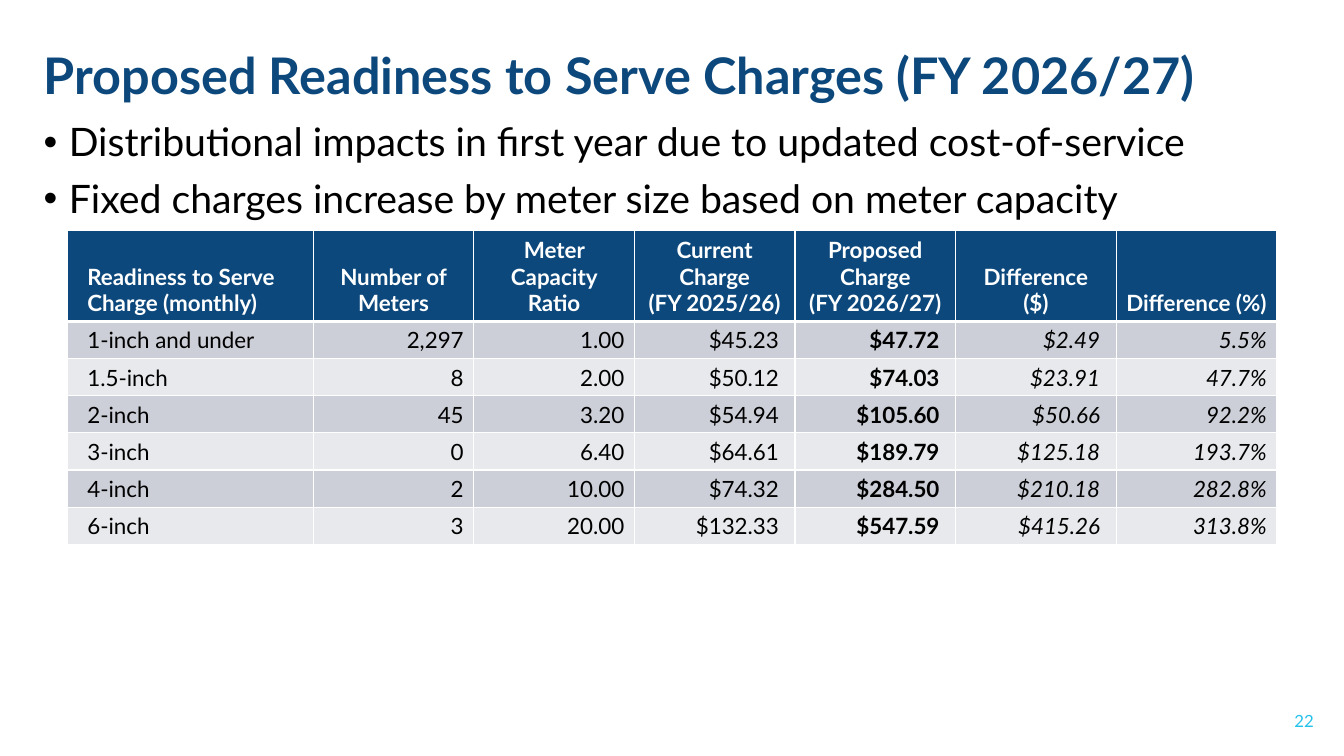
from lxml.etree import SubElement
from pptx import Presentation
from pptx.dml.color import RGBColor
from pptx.enum.text import MSO_ANCHOR as Anchor, MSO_AUTO_SIZE as AutoSize, PP_ALIGN as Align
from pptx.oxml.ns import qn
from pptx.util import Inches, Pt

NAVY = RGBColor(0x0C, 0x48, 0x7C)
CYAN = RGBColor(0x24, 0xC2, 0xEB)
BLACK = RGBColor(0x00, 0x00, 0x00)
WHITE = RGBColor(0xFF, 0xFF, 0xFF)
BANDS = RGBColor(0xCC, 0xCF, 0xD7), RGBColor(0xE7, 0xE9, 0xEC)

GRID_COLUMNS, GRID_ROWS = 40, 75
LABEL_WIDTH, VALUE_WIDTH = 7.32, 4.78
HEADER_HEIGHT, TABLE_HEIGHT = 8.9, 31
PROPOSED_COLUMN = 4

HEADERS = [
    "Readiness to Serve Charge (monthly)", "Number of Meters", "Meter Capacity Ratio",
    "Current\nCharge\n(FY 2025/26)", "Proposed\nCharge\n(FY 2026/27)",
    "Difference\n($)", "Difference (%)",
]
CHARGES = [
    ["1-inch and under", "2,297", "1.00", "$45.23", "$47.72", "$2.49", "5.5%"],
    ["1.5-inch", "8", "2.00", "$50.12", "$74.03", "$23.91", "47.7%"],
    ["2-inch", "45", "3.20", "$54.94", "$105.60", "$50.66", "92.2%"],
    ["3-inch", "0", "6.40", "$64.61", "$189.79", "$125.18", "193.7%"],
    ["4-inch", "2", "10.00", "$74.32", "$284.50", "$210.18", "282.8%"],
    ["6-inch", "3", "20.00", "$132.33", "$547.59", "$415.26", "313.8%"],
]


def write(frame, text, size=16, color=BLACK, bold=False, italic=False, align=Align.LEFT,
          anchor=Anchor.BOTTOM, spacing=None, gap=0, indent=0, bullet=None):
    """Fill a text frame, one paragraph per line; a bullet hangs in the indent."""
    frame.word_wrap = True
    frame.vertical_anchor = anchor
    for index, line in enumerate(text.split("\n")):
        paragraph = frame.add_paragraph() if index else frame.paragraphs[0]
        paragraph.text = line
        properties = paragraph._p.get_or_add_pPr()
        properties.set("marL", str(Inches(indent)))
        properties.set("indent", str(-Inches(indent) if bullet else 0))
        if bullet:
            SubElement(properties, qn("a:buChar"), char=bullet)
        paragraph.alignment = align
        paragraph.line_spacing = spacing
        paragraph.space_before = Pt(gap if index else 0)
        font = paragraph.font
        font.name, font.size, font.bold, font.italic = "Lato", Pt(size), bold, italic
        font.color.rgb = color


def set_borders(cell, top, bottom):
    """Draw white cell borders; the sides are one point wide."""
    properties = cell._tc.get_or_add_tcPr()
    for side, width in zip("LRTB", (1, 1, top, bottom)):
        line = SubElement(properties, qn(f"a:ln{side}"), w=str(Pt(width)))
        fill = SubElement(line, qn("a:solidFill"))
        SubElement(fill, qn("a:srgbClr"), val=str(WHITE))


class ChargesSlide:
    def __init__(self, presentation):
        self.column = presentation.slide_width / GRID_COLUMNS
        self.row = presentation.slide_height / GRID_ROWS
        self.slide = presentation.slides.add_slide(presentation.slide_layouts[1])

    def box(self, left, top, width, height):
        return (round(left * self.column), round(top * self.row),
                round(width * self.column), round(height * self.row))

    def fill_placeholder(self, number, box, text, **style):
        shape = self.slide.placeholders[number]
        shape.left, shape.top, shape.width, shape.height = self.box(*box)
        shape.text_frame.auto_size = AutoSize.NONE
        write(shape.text_frame, text, spacing=0.9, **style)

    def add_text(self, box, text, **style):
        shape = self.slide.shapes.add_textbox(*self.box(*box))
        write(shape.text_frame, text, **style)

    def add_table(self, left, top, headers, body):
        widths = [LABEL_WIDTH] + [VALUE_WIDTH] * (len(headers) - 1)
        heights = [HEADER_HEIGHT] + [(TABLE_HEIGHT - HEADER_HEIGHT) / len(body)] * len(body)
        box = self.box(left, top, sum(widths), TABLE_HEIGHT)
        table = self.slide.shapes.add_table(len(heights), len(widths), *box).table
        for column, width in zip(table.columns, widths):
            column.width = round(width * self.column)
        for row, height in zip(table.rows, heights):
            row.height = round(height * self.row)
        for row, texts in enumerate([headers] + body):
            for column, text in enumerate(texts):
                self.fill_cell(table.cell(row, column), row, column, text)

    def fill_cell(self, cell, row, column, text):
        header = row == 0
        set_borders(cell, top=3 if row == 1 else 1, bottom=3 if header else 1)
        cell.fill.solid()
        cell.fill.fore_color.rgb = NAVY if header else BANDS[(row - 1) % 2]
        if text.startswith("$"):
            cell.margin_right = Inches(0.16)
        value_align = Align.CENTER if header else Align.RIGHT
        write(cell.text_frame, text, color=WHITE if header else BLACK,
              bold=header or column == PROPOSED_COLUMN,
              italic=not header and column > PROPOSED_COLUMN,
              align=value_align if column else Align.LEFT,
              indent=0 if column else 0.1)
        cell.vertical_anchor = Anchor.BOTTOM


def main():
    presentation = Presentation()
    presentation.slide_width, presentation.slide_height = Inches(13.33), Inches(7.5)
    page = ChargesSlide(presentation)
    page.fill_placeholder(0, (1, 4, 38.4, 7), "Proposed Readiness to Serve Charges (FY 2026/27)",
                          size=36, color=NAVY, bold=True)
    page.fill_placeholder(
        1, (1, 11.7, 38, 53.3),
        "Distributional impacts in first year due to updated cost-of-service\n"
        "Fixed charges increase by meter size based on meter capacity",
        size=28, anchor=Anchor.TOP, gap=10, indent=0.25, bullet="•")
    page.add_text((30.4, 69.5, 9, 4), "22", size=12, color=CYAN,
                  align=Align.RIGHT, anchor=Anchor.MIDDLE)
    page.add_table(2, 22.9, HEADERS, CHARGES)
    presentation.save("out.pptx")


if __name__ == "__main__":
    main()
